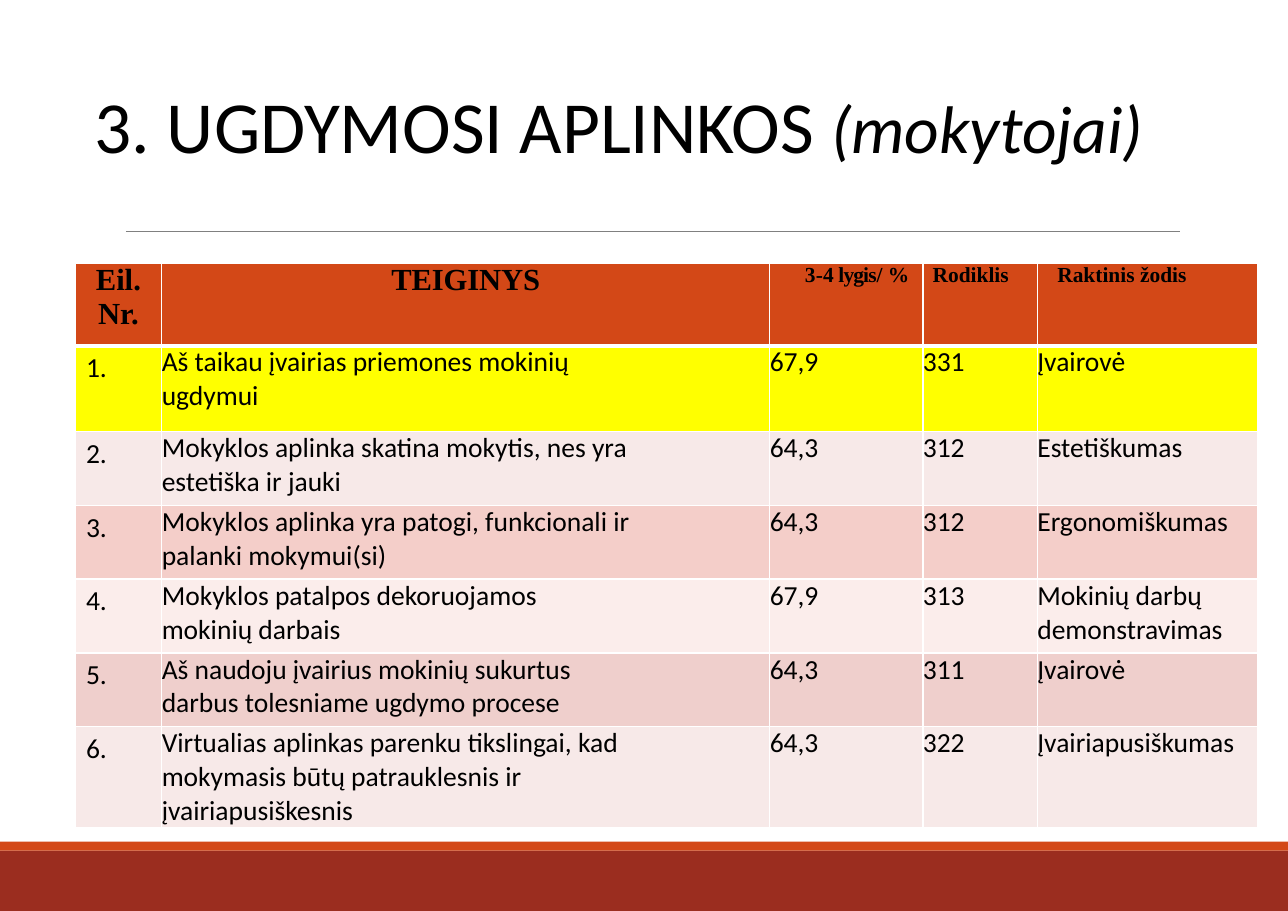
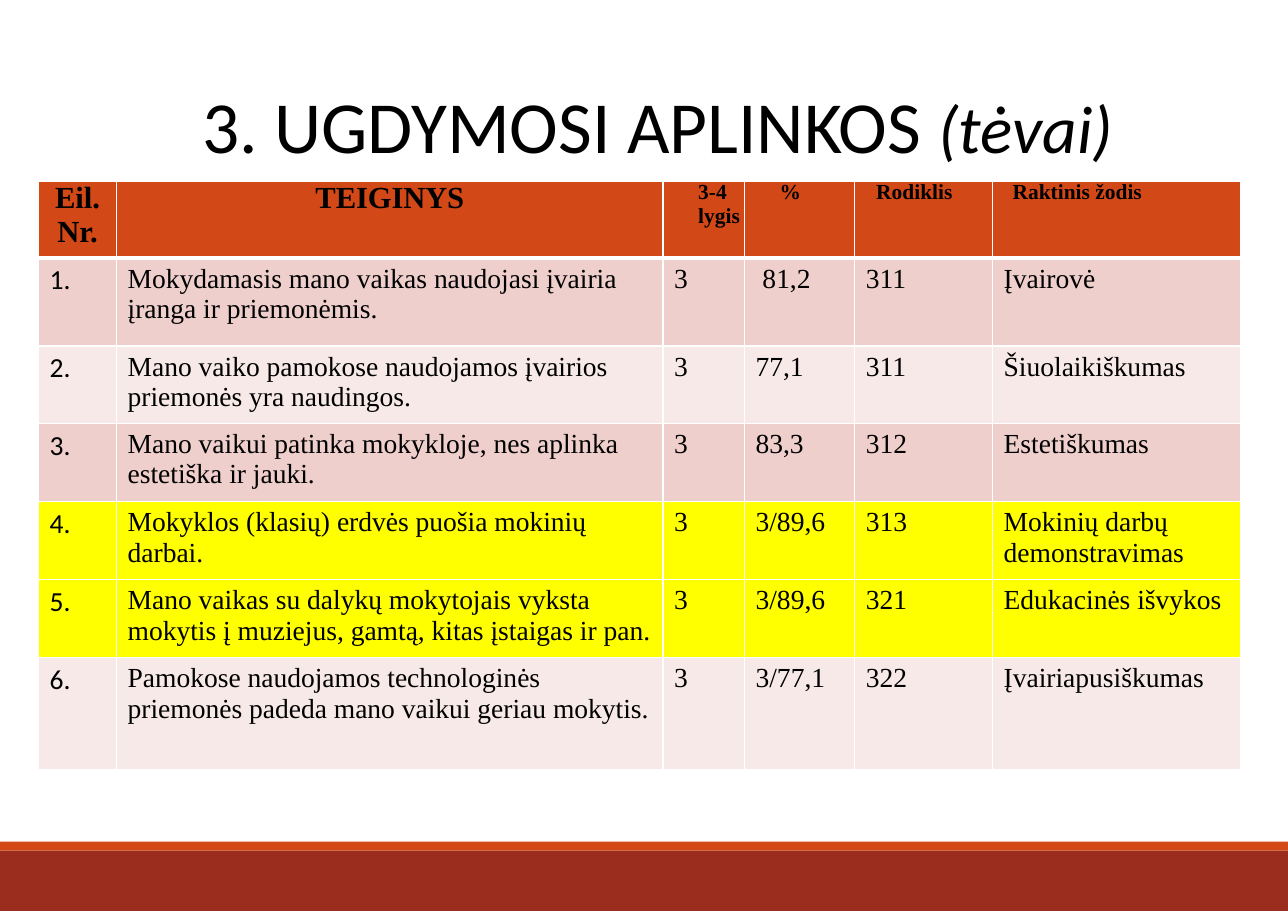
from lxml.etree import SubElement
from pptx import Presentation
from pptx.dml.color import RGBColor
from pptx.enum.shapes import MSO_CONNECTOR, MSO_SHAPE
from pptx.enum.text import MSO_ANCHOR, PP_ALIGN
from pptx.oxml.ns import qn
from pptx.util import Cm, Pt

SANS, SERIF = "Calibri", "Times New Roman"
BLACK, WHITE, GREY = "000000", "FFFFFF", "808080"
BRICK, ORANGE, YELLOW = "9B2D1F", "D34817", "FFFF00"
ROSE, PALE_ROSE, CORAL, PALE_CORAL = "EFCFCC", "F7E9E8", "F4CEC9", "FBEDEB"
TITLE = "3. UGDYMOSI APLINKOS "


def color(value):
    return RGBColor.from_string(value)


def write_text(frame, text, size=18, font=SANS, bold=False, italic=False,
               align=PP_ALIGN.LEFT, spacing=0):
    """Write a string, one paragraph a line, or a list of (text, format) runs."""
    lines = [[(line, {})] for line in text.split("\n")] if isinstance(text, str) else [text]
    for index, runs in enumerate(lines):
        paragraph = frame.add_paragraph() if index else frame.paragraphs[0]
        paragraph.alignment = align
        for content, own in runs:
            run = paragraph.add_run()
            run.text = content
            run.font.name = font
            run.font.size = Pt(own.get("size", size))
            run.font.bold = bold
            run.font.italic = own.get("italic", italic)
            run.font.color.rgb = color(BLACK)
            run_spacing = own.get("spacing", spacing)
            if run_spacing:
                run.font._element.set("spc", str(round(run_spacing * 100)))


def set_borders(cell, top=1, bottom=1):
    properties = cell._tc.get_or_add_tcPr()
    for side, width in (("L", 1), ("R", 1), ("T", top), ("B", bottom)):
        line = SubElement(properties, qn(f"a:ln{side}"), w=str(Pt(width)))
        fill = SubElement(line, qn("a:solidFill"))
        SubElement(fill, qn("a:srgbClr"), val=WHITE)


class Deck:
    def __init__(self):
        self.presentation = Presentation()
        self.presentation.slide_width = Cm(29.7)
        self.presentation.slide_height = Cm(21)
        self.slide = None

    def add_slide(self, audience, align):
        layout = self.presentation.slide_layouts[5]
        self.slide = self.presentation.slides.add_slide(layout)
        self.title(audience, align)
        self.band(19.61, 1.39, BRICK)
        self.band(19.4, 0.21, ORANGE)
        self.rule(2.9, 27.2, 5.33)

    def title(self, audience, align):
        shape = self.slide.shapes.title
        shape.left, shape.top, shape.width, shape.height = Cm(1.93), Cm(1.63), Cm(26.47), Cm(7.39)
        frame = shape.text_frame
        frame.vertical_anchor = MSO_ANCHOR.TOP
        frame.margin_top = Cm(0.22)
        runs = [(TITLE, {}), (f"({audience})", {"size": 44, "italic": True})]
        write_text(frame, runs, size=48, align=align)

    def band(self, top, height, fill):
        shape = self.slide.shapes.add_shape(
            MSO_SHAPE.RECTANGLE, 0, Cm(top), self.presentation.slide_width, Cm(height))
        shape.shadow.inherit = False
        shape.fill.solid()
        shape.fill.fore_color.rgb = color(fill)
        shape.line.fill.background()

    def rule(self, left, right, top):
        line = self.slide.shapes.add_connector(
            MSO_CONNECTOR.STRAIGHT, Cm(left), Cm(top), Cm(right), Cm(top))
        line.line.color.rgb = color(GREY)
        line.line.width = Pt(0.5)
        SubElement(line._element.spPr, qn("a:effectLst"))

    def cell(self, cell, text, fill, margins=None, top=1, bottom=1, **text_format):
        if margins:
            left, right = margins
            cell.margin_left, cell.margin_right = Cm(left), Cm(right)
            cell.margin_top = cell.margin_bottom = 0
        set_borders(cell, top, bottom)
        cell.fill.solid()
        cell.fill.fore_color.rgb = color(fill)
        write_text(cell.text_frame, text, **text_format)

    def table(self, left, top, widths, heights, header, rows, font, margins=None):
        table = self.slide.shapes.add_table(
            len(heights), len(widths), Cm(left), Cm(top),
            Cm(sum(widths)), Cm(sum(heights))).table
        for column, width in zip(table.columns, widths):
            column.width = Cm(width)
        for row, height in zip(table.rows, heights):
            row.height = Cm(height)
        for column, (text, text_format) in enumerate(header):
            self.cell(table.cell(0, column), text, ORANGE, bottom=3,
                      font=SERIF, bold=True, **text_format)
        for number, (fill, *texts) in enumerate(rows, start=1):
            edge = 3 if number == 1 else 1
            self.cell(table.cell(number, 0), f"{number}.", fill, top=edge)
            for column, text in enumerate(texts, start=1):
                self.cell(table.cell(number, column), text, fill, margins, top=edge, font=font)


# Header formats shared by both tables
LARGE = {"size": 20, "align": PP_ALIGN.CENTER, "margins": (0, 0)}
INDENTED = {"size": 14, "margins": (0.81, 0)}
HEADER_START = [("Eil.\nNr.", LARGE), ("TEIGINYS", {**LARGE, "spacing": -0.1})]
HEADER_END = [
    ("Rodiklis", {"size": 14, "align": PP_ALIGN.CENTER, "margins": (0, 0.43)}),
    ("Raktinis žodis", {"size": 14, "margins": (0.46, 0)}),
]

TEACHER_LEVEL = [("3-4", {"spacing": 0.1}), (" lygis", {"spacing": -0.6}), ("/ %", {})]
TEACHER_ROWS = [
    (YELLOW, "Aš taikau įvairias priemones mokinių\nugdymui", "67,9", "331", "Įvairovė"),
    (PALE_ROSE, "Mokyklos aplinka skatina mokytis, nes yra\nestetiška ir jauki",
     "64,3", "312", "Estetiškumas"),
    (CORAL, "Mokyklos aplinka yra patogi, funkcionali ir\npalanki mokymui(si)",
     "64,3", "312", "Ergonomiškumas"),
    (PALE_CORAL, "Mokyklos patalpos dekoruojamos\nmokinių darbais",
     "67,9", "313", "Mokinių darbų demonstravimas"),
    (ROSE, "Aš naudoju įvairius mokinių sukurtus\ndarbus tolesniame ugdymo procese",
     "64,3", "311", "Įvairovė"),
    (PALE_ROSE, "Virtualias aplinkas parenku tikslingai, kad\nmokymasis būtų patrauklesnis ir\n"
     "įvairiapusiškesnis", "64,3", "322", "Įvairiapusiškumas"),
]
PARENT_ROWS = [
    (ROSE, "Mokydamasis mano vaikas naudojasi įvairia įranga ir priemonėmis.",
     "3", " 81,2", "311", "Įvairovė"),
    (PALE_ROSE, "Mano vaiko pamokose naudojamos įvairios priemonės yra naudingos.",
     "3", "77,1", "311", "Šiuolaikiškumas"),
    (ROSE, "Mano vaikui patinka mokykloje, nes aplinka estetiška ir jauki.",
     "3", "83,3", "312", "Estetiškumas"),
    (YELLOW, "Mokyklos (klasių) erdvės puošia mokinių darbai.",
     "3", "3/89,6", "313", "Mokinių darbų\ndemonstravimas"),
    (YELLOW, "Mano vaikas su dalykų mokytojais vyksta\n"
     "mokytis į muziejus, gamtą, kitas įstaigas ir pan.",
     "3", "3/89,6", "321", "Edukacinės išvykos"),
    (PALE_ROSE, "Pamokose naudojamos technologinės priemonės padeda mano vaikui geriau mokytis.",
     "3", "3/77,1", "322", "Įvairiapusiškumas"),
]


def main():
    deck = Deck()

    # Teachers
    deck.add_slide("mokytojai", PP_ALIGN.LEFT)
    deck.table(1.73, 6.07, [2, 14.02, 3.53, 2.64, 5.08], [1.9, 1.98] + [1.7] * 4 + [2.3],
               HEADER_START + [(TEACHER_LEVEL, INDENTED)] + HEADER_END,
               TEACHER_ROWS, SANS, margins=(0, 0))

    # Parents
    deck.add_slide("tėvai", PP_ALIGN.CENTER)
    deck.table(0.89, 4.17, [1.8, 12.6, 1.88, 2.54, 3.18, 5.71],
               [1.78, 2.03, 1.78] + [1.8] * 3 + [2.59],
               HEADER_START + [("3-4 lygis", INDENTED), ("%", INDENTED)] + HEADER_END,
               PARENT_ROWS, SERIF)

    deck.presentation.save("out.pptx")


if __name__ == "__main__":
    main()
